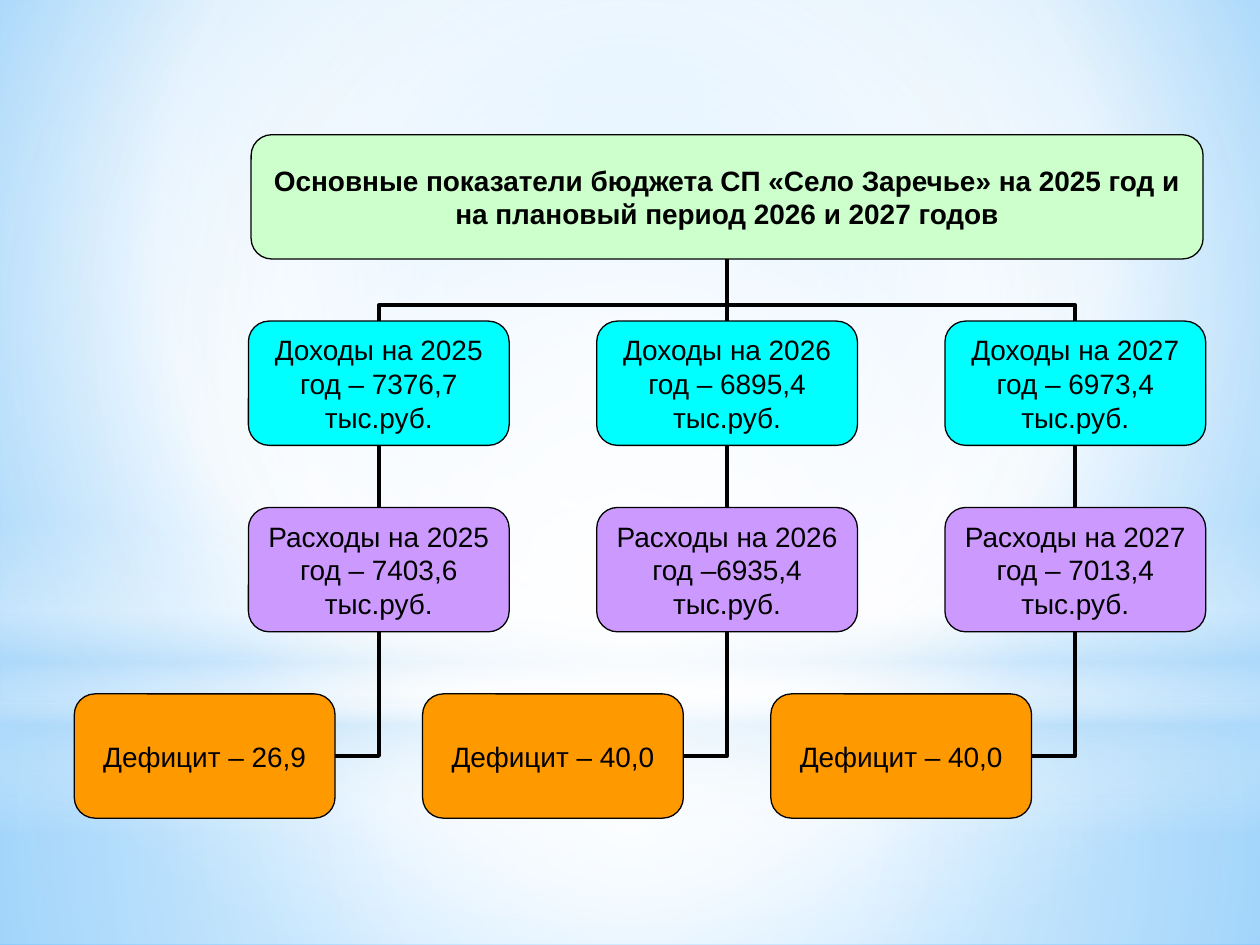
from lxml import etree
from pptx import Presentation
from pptx.dml.color import RGBColor
from pptx.enum.shapes import MSO_CONNECTOR, MSO_SHAPE
from pptx.enum.text import MSO_ANCHOR, PP_ALIGN
from pptx.oxml.ns import qn
from pptx.util import Pt

STRAIGHT, ELBOW = MSO_CONNECTOR.STRAIGHT, MSO_CONNECTOR.ELBOW
RECTANGLE, ELLIPSE = MSO_SHAPE.RECTANGLE, MSO_SHAPE.OVAL
ROUNDED = MSO_SHAPE.ROUNDED_RECTANGLE
MIDDLE, CENTER = MSO_ANCHOR.MIDDLE, PP_ALIGN.CENTER

COLORS = {
    "black": "000000", "white": "FFFFFF", "title": "CCFFCC",
    "income": "00FFFF", "expense": "CC99FF", "deficit": "FF9900",
    "sky": "9ED5FF", "edge": "5BB9FF", "haze": "B4DCFA",
}
SLIDE_WIDTH, SLIDE_HEIGHT = 720, 540
BOX_WIDTH, BOX_HEIGHT = 149, 71
COLUMN_LEFT, COLUMN_STEP = 142, 199
ROW_TOP, ROW_STEP = 77, 106.5
DEFICIT_SHIFT = 99.5
TITLE_WIDTH = 544
TITLE = "Основные показатели бюджета СП «Село Заречье» на 2025 год и на плановый период 2026 и 2027 годов"
YEARS = [
    ("Доходы на 2025 год – 7376,7 тыс.руб.", "Расходы на 2025 год – 7403,6 тыс.руб.", "Дефицит – 26,9"),
    ("Доходы на 2026 год – 6895,4 тыс.руб.", "Расходы на 2026 год –6935,4 тыс.руб.", "Дефицит – 40,0"),
    ("Доходы на 2027 год – 6973,4 тыс.руб.", "Расходы на 2027 год – 7013,4 тыс.руб.", "Дефицит – 40,0"),
]


class BudgetSlide:
    font_name, font_size = "Arial", 16
    outline, connector_width = 0.75, 2.25

    def __init__(self, deck):
        self.slide = deck.slides.add_slide(deck.slide_layouts[6])

    def color(self, name):
        return RGBColor.from_string(COLORS[name])

    def gradient(self, fill, element, stops, focus=None):
        fill.gradient()
        gradient = element.find(".//" + qn("a:gradFill"))
        gradient.clear()
        gradient.set("rotWithShape", "1")
        stop_list = etree.SubElement(gradient, qn("a:gsLst"))
        for position, name, opacity in stops:
            stop = etree.SubElement(stop_list, qn("a:gs"), pos=str(position * 1000))
            color = etree.SubElement(stop, qn("a:srgbClr"), val=COLORS[name])
            if opacity < 100:
                etree.SubElement(color, qn("a:alpha"), val=str(opacity * 1000))
        if focus:
            path = etree.SubElement(gradient, qn("a:path"), path="circle")
            sides = {side: str(value * 1000) for side, value in zip("ltrb", focus)}
            etree.SubElement(path, qn("a:fillToRect"), sides)
        else:
            etree.SubElement(gradient, qn("a:lin"), ang="5400000", scaled="0")

    def background(self, stops, focus):
        self.gradient(self.slide.background.fill, self.slide.element, stops, focus)

    def glow(self, kind, top, height, stops, focus=None):
        shape = self.slide.shapes.add_shape(kind, 0, Pt(top), Pt(SLIDE_WIDTH), Pt(height))
        shape.shadow.inherit = False
        shape.line.fill.background()
        self.gradient(shape.fill, shape.element, stops, focus)

    def connector(self, start, end, kind=STRAIGHT):
        line = self.slide.shapes.add_connector(kind, *(Pt(value) for value in (*start, *end)))
        line.line.color.rgb = self.color("black")
        line.line.width = Pt(self.connector_width)
        etree.SubElement(line.element.spPr, qn("a:effectLst"))
        return line

    def corner(self, start, end):
        line = self.connector(start, end, ELBOW)
        line.element.spPr.find(qn("a:prstGeom")).set("prst", "bentConnector2")

    def branch(self, start, end):
        middle_x, middle_y = (start[0] + end[0]) / 2, (start[1] + end[1]) / 2
        half_width, half_height = abs(start[1] - end[1]) / 2, abs(start[0] - end[0]) / 2
        side = 1 if start[0] > end[0] else -1
        line = self.connector(
            (middle_x + side * half_width, middle_y - half_height),
            (middle_x - side * half_width, middle_y + half_height), ELBOW)
        properties = line.element.spPr
        properties.find(qn("a:xfrm")).set("rot", "5400000" if side > 0 else "16200000")
        guides = properties.find(qn("a:prstGeom")).find(qn("a:avLst"))
        etree.SubElement(guides, qn("a:gd"), name="adj1", fmla="val 25400")

    def box(self, text, left, top, fill, width=BOX_WIDTH, bold=False):
        shape = self.slide.shapes.add_shape(ROUNDED, Pt(left), Pt(top), Pt(width), Pt(BOX_HEIGHT))
        shape.shadow.inherit = False
        shape.fill.solid()
        shape.fill.fore_color.rgb = self.color(fill)
        shape.line.color.rgb = self.color("black")
        shape.line.width = Pt(self.outline)
        frame = shape.text_frame
        frame.word_wrap = True
        frame.vertical_anchor = MIDDLE
        frame.margin_left = frame.margin_right = frame.margin_top = frame.margin_bottom = 0
        para = frame.paragraphs[0]
        para.text = text
        para.alignment = CENTER
        para.font.name = self.font_name
        para.font.size = Pt(self.font_size)
        para.font.bold = bold
        para.font.color.rgb = self.color("black")


def add_backdrop(page):
    center = (50, 50, 50, 50)
    horizon = 402
    page.background([(0, "sky", 100), (60, "white", 100), (100, "edge", 100)], (20, 10, 20, 60))
    page.glow(RECTANGLE, horizon, SLIDE_HEIGHT - horizon,
              [(0, "white", 91), (37, "white", 76), (100, "haze", 79)], center)
    page.glow(RECTANGLE, 0, horizon,
              [(0, "white", 89), (48, "white", 62), (100, "haze", 79)], center)
    page.glow(RECTANGLE, 297, 180,
              [(0, "white", 0), (29, "white", 30), (45, "haze", 40),
               (55, "white", 26), (65, "haze", 60), (100, "white", 0)])
    page.glow(ELLIPSE, 126, horizon, [(0, "white", 100), (56, "white", 0)], center)


def add_chart_tree(page):
    title_top, income_top, expense_top, deficit_top = (ROW_TOP + row * ROW_STEP for row in range(4))
    lefts = [COLUMN_LEFT + column * COLUMN_STEP for column in range(len(YEARS))]
    centers = [left + BOX_WIDTH / 2 for left in lefts]
    trunk_x = centers[1]
    trunk = (trunk_x, title_top + BOX_HEIGHT)

    for left, center in zip(lefts, centers):
        deficit_right = left - DEFICIT_SHIFT + BOX_WIDTH
        page.corner((deficit_right, deficit_top + BOX_HEIGHT / 2), (center, expense_top + BOX_HEIGHT))
        page.connector((center, expense_top), (center, income_top + BOX_HEIGHT))
        join = page.connector if center == trunk_x else page.branch
        join((center, income_top), trunk)

    page.box(TITLE, trunk_x - TITLE_WIDTH / 2, title_top, "title", TITLE_WIDTH, bold=True)
    for left, (income, expense, deficit) in zip(lefts, YEARS):
        page.box(income, left, income_top, "income")
        page.box(expense, left, expense_top, "expense")
        page.box(deficit, left - DEFICIT_SHIFT, deficit_top, "deficit")


def main():
    deck = Presentation()
    deck.slide_width, deck.slide_height = Pt(SLIDE_WIDTH), Pt(SLIDE_HEIGHT)
    page = BudgetSlide(deck)
    add_backdrop(page)
    add_chart_tree(page)
    deck.save("out.pptx")


if __name__ == "__main__":
    main()
